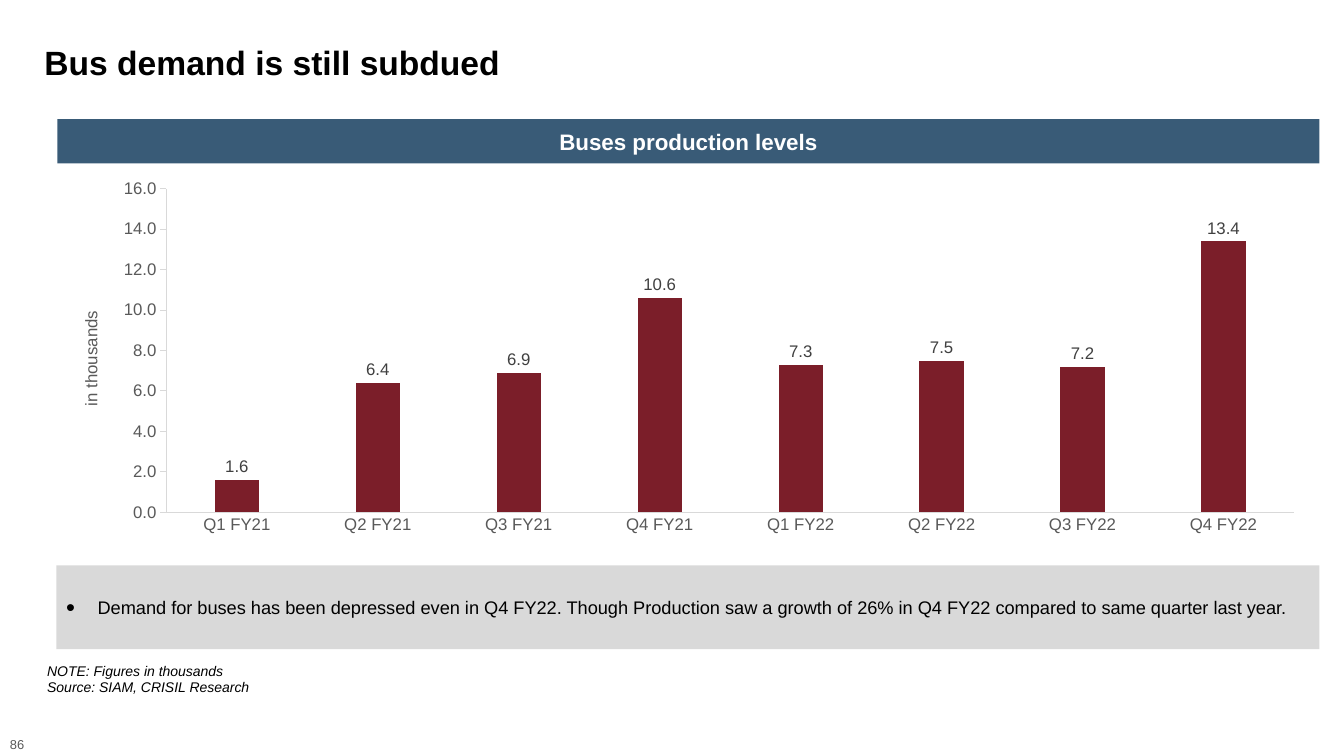
from dataclasses import dataclass

from lxml.etree import SubElement
from pptx import Presentation
from pptx.chart.data import CategoryChartData
from pptx.dml.color import RGBColor
from pptx.enum.chart import XL_CHART_TYPE, XL_LABEL_POSITION, XL_TICK_MARK
from pptx.enum.shapes import MSO_SHAPE
from pptx.enum.text import MSO_ANCHOR, MSO_AUTO_SIZE, PP_ALIGN
from pptx.oxml import parse_xml
from pptx.oxml.ns import nsdecls, qn
from pptx.util import Cm, Pt


@dataclass(frozen=True)
class Theme:
    font: str = "Arial"
    black: str = "000000"
    white: str = "FFFFFF"
    banner: str = "395B77"
    panel: str = "D9D9D9"
    bar: str = "7B1E29"
    axis_text: str = "595959"
    label_text: str = "404040"
    title_size: float = 24
    banner_size: float = 16
    takeaway_size: float = 13
    chart_size: float = 12
    note_size: float = 10
    page_size: float = 9.2


theme = Theme()


def style_font(font, size, color, bold=False, italic=False):
    font.name = theme.font
    font.size = Pt(size)
    font.bold = bold
    font.italic = italic
    font.color.rgb = RGBColor.from_string(color)


def manual_layout(target, **parts):
    """Return a chart layout element; parts are fractions of the chart area."""
    layout = parse_xml(f"<c:layout {nsdecls('c')}><c:manualLayout/></c:layout>")
    if target:
        SubElement(layout[0], qn("c:layoutTarget")).set("val", target)
    for mode in ("xMode", "yMode"):
        SubElement(layout[0], qn(f"c:{mode}")).set("val", "edge")
    for part, fraction in parts.items():
        SubElement(layout[0], qn(f"c:{part}")).set("val", str(fraction))
    return layout


prs = Presentation()
prs.slide_width, prs.slide_height = Cm(33.87), Cm(19.05)
slide = prs.slides.add_slide(prs.slide_layouts[5])

# Title
title = slide.shapes.title
title.left, title.top, title.width, title.height = Cm(1.12), Cm(0.61), Cm(32.11), Cm(2.06)
frame = title.text_frame
frame.text = "Bus demand is still subdued"
frame.auto_size = MSO_AUTO_SIZE.NONE
frame.margin_left = frame.margin_right = frame.margin_top = frame.margin_bottom = 0
frame.vertical_anchor = MSO_ANCHOR.MIDDLE
heading = frame.paragraphs[0]
heading.alignment = PP_ALIGN.LEFT
heading.line_spacing = 0.9
style_font(heading.runs[0].font, theme.title_size, theme.black, bold=True)

# Banner above the chart and takeaway panel below it
banner = slide.shapes.add_shape(MSO_SHAPE.RECTANGLE, Cm(1.45), Cm(3), Cm(31.8), Cm(1.12))
takeaway = slide.shapes.add_shape(MSO_SHAPE.RECTANGLE, Cm(1.42), Cm(14.25), Cm(31.83), Cm(2.11))
for panel, fill in ((banner, theme.banner), (takeaway, theme.panel)):
    panel.shadow.inherit = False
    panel.fill.solid()
    panel.fill.fore_color.rgb = RGBColor.from_string(fill)
    panel.line.fill.background()
    panel.text_frame.word_wrap = True
    panel.text_frame.vertical_anchor = MSO_ANCHOR.MIDDLE

banner.text_frame.text = "Buses production levels"
banner_line = banner.text_frame.paragraphs[0]
banner_line.alignment = PP_ALIGN.CENTER
style_font(banner_line.runs[0].font, theme.banner_size, theme.white, bold=True)

takeaway.text_frame.text = (
    "Demand for buses has been depressed even in Q4 FY22. Though Production saw a growth "
    "of 26% in Q4 FY22 compared to same quarter last year."
)
bullet = takeaway.text_frame.paragraphs[0]
bullet.alignment = PP_ALIGN.LEFT
bullet_format = bullet._p.get_or_add_pPr()
bullet_format.set("marL", str(Cm(0.79)))
bullet_format.set("indent", str(-Cm(0.79)))
SubElement(bullet_format, qn("a:buSzPct")).set("val", "140000")
SubElement(bullet_format, qn("a:buFont")).set("typeface", theme.font)
SubElement(bullet_format, qn("a:buChar")).set("char", "•")
style_font(bullet.runs[0].font, theme.takeaway_size, theme.black)

# Production chart
production = CategoryChartData(number_format="0.0")
production.categories = [f"Q{quarter} FY{year}" for year in (21, 22) for quarter in range(1, 5)]
production.add_series("Series 1", (1.6, 6.4, 6.9, 10.6, 7.3, 7.5, 7.2, 13.4))
chart = slide.shapes.add_chart(
    XL_CHART_TYPE.COLUMN_CLUSTERED, Cm(1.32), Cm(4.29), Cm(31.93), Cm(9.37), production
).chart
chart.has_title = False
chart.has_legend = False
style_font(chart.font, theme.chart_size, theme.black)

plot = chart.plots[0]
plot.gap_width = 219
plot.overlap = -27
plot.vary_by_categories = False
bars = plot.series[0]
bars.format.fill.solid()
bars.format.fill.fore_color.rgb = RGBColor.from_string(theme.bar)
labels = bars.data_labels
labels.show_value = True
labels.position = XL_LABEL_POSITION.OUTSIDE_END
labels.number_format = "0.0"
labels.number_format_is_linked = False
style_font(labels.font, theme.chart_size, theme.label_text)

quarters, volume = chart.category_axis, chart.value_axis
for axis, tick in ((quarters, XL_TICK_MARK.NONE), (volume, XL_TICK_MARK.OUTSIDE)):
    axis.has_major_gridlines = False
    axis.major_tick_mark = tick
    axis.minor_tick_mark = XL_TICK_MARK.NONE
    axis.format.line.color.rgb = RGBColor.from_string(theme.panel)
    axis.format.line.width = Pt(0.75)
    style_font(axis.tick_labels.font, theme.chart_size, theme.axis_text)
volume.minimum_scale, volume.maximum_scale, volume.major_unit = 0, 16, 2
volume.tick_labels.number_format = "0.0"
volume.tick_labels.number_format_is_linked = False

unit = volume.axis_title
unit.text_frame.text = "in thousands"
unit.text_frame._txBody.bodyPr.set("rot", "-5400000")
unit.text_frame._txBody.bodyPr.set("vert", "horz")
style_font(unit.text_frame.paragraphs[0].runs[0].font, theme.chart_size, theme.axis_text)

plot_area = chart._chartSpace.chart.plotArea
for holder, layout in (
    (plot_area, manual_layout("inner", x=0.09, y=0.05, w=0.89, h=0.87)),
    (unit._element, manual_layout(None, x=0.02, y=0.37)),
):
    for automatic in holder.findall(qn("c:layout")):
        holder.remove(automatic)
    text = holder.find(qn("c:tx"))
    holder.insert(0 if text is None else holder.index(text) + 1, layout)

# Note and page number
for words, left, top, width, height, size, color, italic in (
    ("NOTE: Figures in thousands\nSource: SIAM, CRISIL Research",
     0.94, 16.56, 15.8, 1.12, theme.note_size, theme.black, True),
    ("86", 0, 18.44, 0.91, 0.66, theme.page_size, theme.axis_text, False),
):
    footer = slide.shapes.add_textbox(Cm(left), Cm(top), Cm(width), Cm(height)).text_frame
    footer.text = words
    footer.word_wrap = italic
    for line in footer.paragraphs:
        style_font(line.runs[0].font, size, color, italic=italic)

prs.save("out.pptx")
